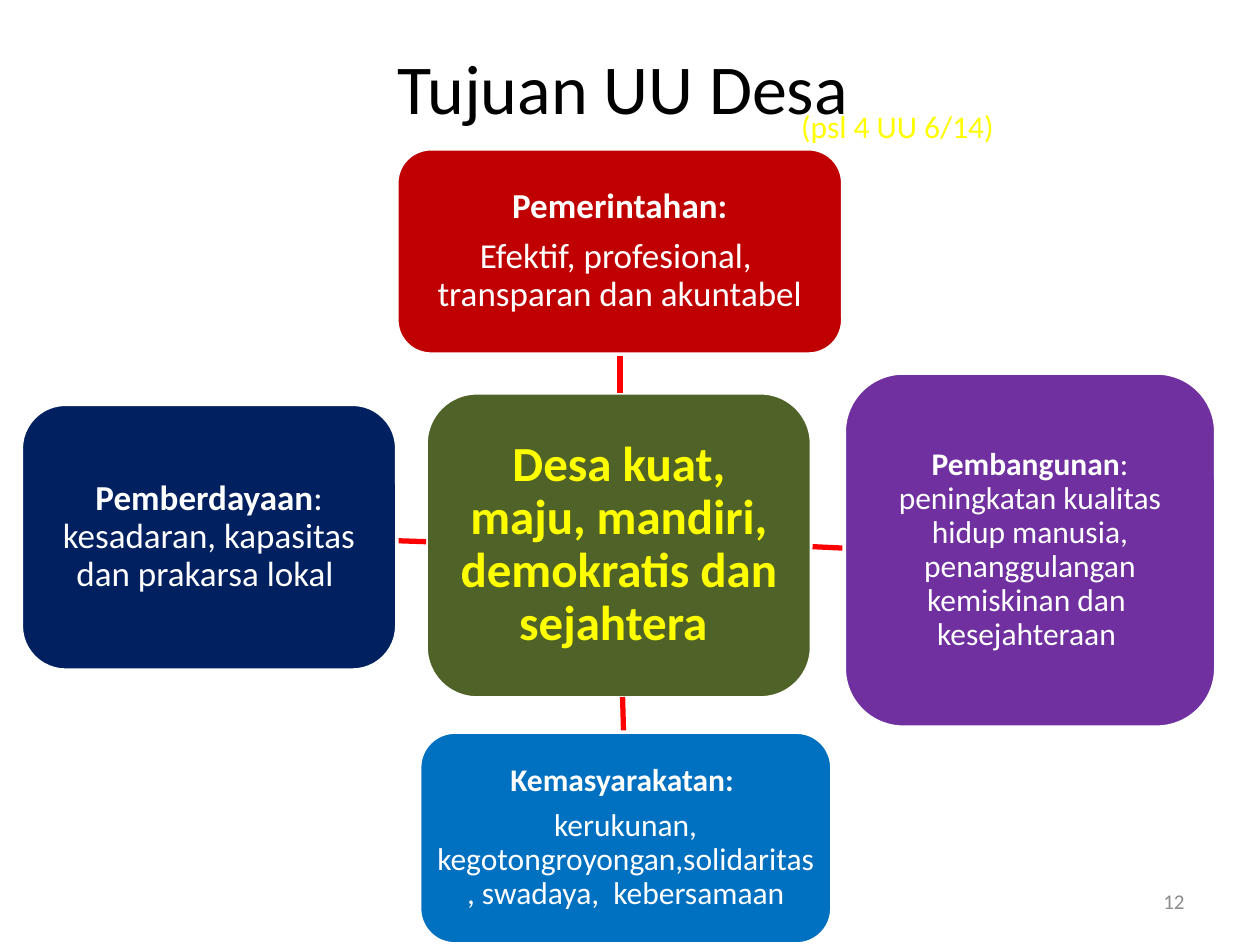
import pptx
import pptx.dml.color
import pptx.enum.shapes
import pptx.enum.text
import pptx.util
from lxml import etree

Cm = pptx.util.Cm
Pt = pptx.util.Pt
ALIGN = pptx.enum.text.PP_ALIGN
MIDDLE = pptx.enum.text.MSO_ANCHOR.MIDDLE
DRAWING = "http://schemas.openxmlformats.org/drawingml/2006/main"


def color(value):
    return pptx.dml.color.RGBColor.from_string(value)


def write(frame, paragraphs, size, fill, font="Calibri", align=ALIGN.CENTER,
          line_spacing=None, space_after=None):
    """Fill a text frame; each paragraph is a list of (text, bold) spans."""
    for index, spans in enumerate(paragraphs):
        para = frame.add_paragraph() if index else frame.paragraphs[0]
        para.alignment = align
        if line_spacing:
            para.line_spacing = line_spacing
        if space_after is not None:
            para.space_after = Pt(space_after)
        for text, bold in spans:
            span = para.add_run()
            span.text = text
            span.font.name = font
            span.font.size = Pt(size)
            span.font.bold = bold
            span.font.color.rgb = color(fill)


class Slide:
    link_color = "FF0000"
    border_color = "FFFFFF"

    def __init__(self, deck):
        self.page = deck.slides.add_slide(deck.slide_layouts[5])

    def title(self, text, place):
        box = self.page.shapes.title
        box.left, box.top, box.width, box.height = map(Cm, place)
        box.text_frame.vertical_anchor = MIDDLE
        write(box.text_frame, [[(text, False)]], 40, "000000")

    def label(self, text, place, size, fill, wrap=True, anchor=None, align=ALIGN.LEFT):
        frame = self.page.shapes.add_textbox(*map(Cm, place)).text_frame
        frame.word_wrap = wrap
        frame.vertical_anchor = anchor
        write(frame, [[(text, False)]], size, fill, align=align)

    def link(self, ends):
        line = self.page.shapes.add_connector(
            pptx.enum.shapes.MSO_CONNECTOR.STRAIGHT, *map(Cm, ends))
        line.line.color.rgb = color(self.link_color)
        line.line.width = Pt(3)
        etree.SubElement(line._element.spPr, f"{{{DRAWING}}}effectLst")

    def card(self, place, fill, paragraphs, size, margin, text_color="FFFFFF"):
        box = self.page.shapes.add_shape(
            pptx.enum.shapes.MSO_SHAPE.ROUNDED_RECTANGLE, *map(Cm, place))
        box.shadow.inherit = False
        box.fill.solid()
        box.fill.fore_color.rgb = color(fill)
        box.line.color.rgb = color(self.border_color)
        box.line.width = Pt(2)
        frame = box.text_frame
        frame.word_wrap = True
        frame.vertical_anchor = MIDDLE
        frame.margin_left = frame.margin_right = Cm(margin)
        frame.margin_top = frame.margin_bottom = Cm(margin)
        write(frame, paragraphs, size, text_color,
              line_spacing=0.9, space_after=0.35 * size)


# Link ends, card place, fill, paragraphs, text size, margin
GOALS = [
    ((12.5, 7.92, 12.5, 7.16), (8, 3, 8.99, 4.14), "C00000",
     [[("Pemerintahan:", True)],
      [("Efektif, profesional,  transparan dan akuntabel", False)]], 20, 0.15),
    ((16.38, 11.02, 17.02, 11.05), (17.02, 7.52, 7.49, 7.14), "7030A0",
     [[("Pembangunan", True),
       (": peningkatan kualitas hidup manusia, penanggulangan kemiskinan dan  "
        "kesejahteraan ", False)]], 18, 0.13),
    ((12.55, 14.05, 12.57, 14.76), (8.46, 14.76, 8.31, 4.27), "0070C0",
     [[("Kemasyarakatan: ", True)],
      [("kerukunan, kegotongroyongan,solidaritas, swadaya,  kebersamaan", False)]],
     18, 0.13),
    ((8.59, 10.92, 8, 10.9), (0.43, 8.15, 7.57, 5.36), "002060",
     [[("Pemberdayaan", True),
       (": kesadaran, kapasitas dan prakarsa lokal ", False)]], 20, 0.15),
]


def main():
    deck = pptx.Presentation()
    deck.slide_width, deck.slide_height = Cm(25.4), Cm(19.05)
    slide = Slide(deck)
    slide.title("Tujuan UU Desa", (0.2, 0.38, 24.71, 2.74))
    slide.label("12", (18.21, 17.65, 5.92, 1.02), 12, "8C8C8C",
                anchor=MIDDLE, align=ALIGN.RIGHT)
    slide.card((8.59, 7.92, 7.77, 6.15), "4F6228",
               [[("Desa kuat, maju, mandiri, demokratis dan sejahtera ", True)]],
               28, 0.2, text_color="FFFF00")
    for ends, *card in GOALS:
        slide.link(ends)
        slide.card(*card)
    slide.label("(psl 4 UU 6/14)", (15.9, 2.03, 4.83, 1.02), 18, "FFFF00", wrap=False)
    deck.save("out.pptx")


if __name__ == "__main__":
    main()
